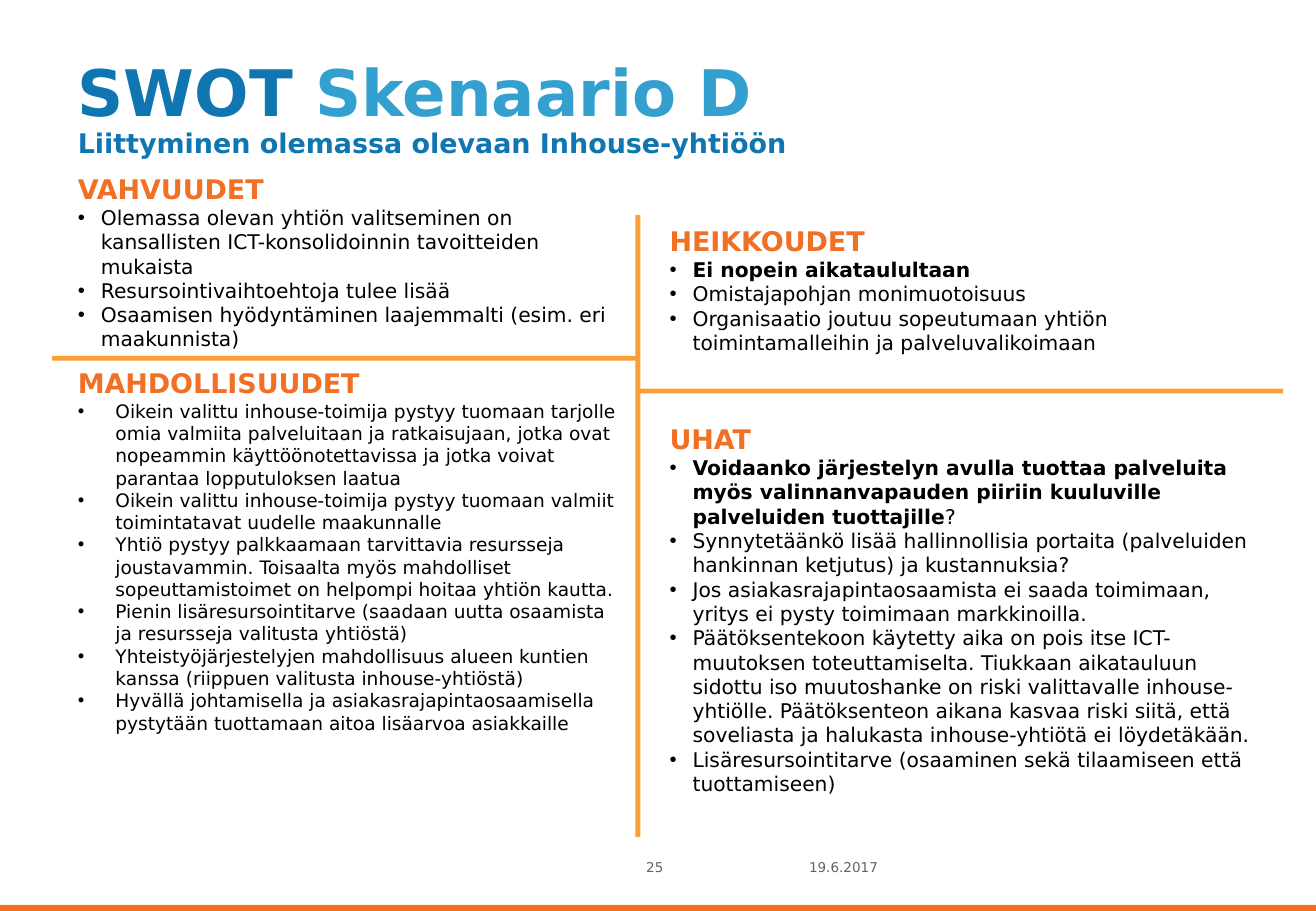
from dataclasses import dataclass

import pptx
import pptx.dml.color
import pptx.enum.shapes
import pptx.enum.text
import pptx.oxml
import pptx.oxml.ns
import pptx.util
from pptx.util import Inches


@dataclass(frozen=True)
class Theme:
    font: str = "DejaVu Sans"
    dark_blue: str = "0F76B1"
    light_blue: str = "34A0CF"
    heading: str = "F27024"
    divider: str = "F99F35"
    body: str = "000000"
    footer: str = "616365"
    title_size: int = 38
    heading_size: int = 16
    body_size: int = 12
    dense_size: int = 11
    footer_size: int = 8


@dataclass(frozen=True)
class Box:
    left: float
    top: float
    width: float
    height: float


@dataclass(frozen=True)
class Point:
    """One bullet; the tail follows the text and is never bold."""
    text: str
    bold: bool = False
    tail: str = ""


@dataclass(frozen=True)
class Quadrant:
    heading: str
    box: Box
    points: tuple[Point, ...]
    size: int
    indent: float = 0.19


@dataclass(frozen=True)
class Bar:
    box: Box
    color: str


@dataclass(frozen=True)
class FooterItem:
    text: str
    left: float


THEME = Theme()
COMPARISON_LAYOUT = 4

STRENGTHS = Quadrant("VAHVUUDET", Box(0.54, 1.4, 4.68, 1.56), (
    Point("Olemassa olevan yhtiön valitseminen on kansallisten ICT-konsolidoinnin tavoitteiden mukaista"),
    Point("Resursointivaihtoehtoja tulee lisää"),
    Point("Osaamisen hyödyntäminen laajemmalti (esim. eri maakunnista)"),
), THEME.body_size)

WEAKNESSES = Quadrant("HEIKKOUDET", Box(5.41, 1.83, 5.15, 1.15), (
    Point("Ei nopein aikataulultaan", bold=True),
    Point("Omistajapohjan monimuotoisuus"),
    Point("Organisaatio joutuu sopeutumaan yhtiön toimintamalleihin ja palveluvalikoimaan"),
), THEME.body_size)

OPPORTUNITIES = Quadrant("MAHDOLLISUUDET", Box(0.54, 3, 4.72, 3.12), (
    Point("Oikein valittu inhouse-toimija pystyy tuomaan tarjolle omia valmiita palveluitaan ja "
          "ratkaisujaan, jotka ovat nopeammin käyttöönotettavissa ja jotka voivat parantaa "
          "lopputuloksen laatua"),
    Point("Oikein valittu inhouse-toimija pystyy tuomaan valmiit toimintatavat uudelle maakunnalle"),
    Point("Yhtiö pystyy palkkaamaan tarvittavia resursseja joustavammin. Toisaalta myös mahdolliset "
          "sopeuttamistoimet on helpompi hoitaa yhtiön kautta."),
    Point("Pienin lisäresursointitarve (saadaan uutta osaamista ja resursseja valitusta yhtiöstä)"),
    Point("Yhteistyöjärjestelyjen mahdollisuus alueen kuntien kanssa (riippuen valitusta inhouse-yhtiöstä)"),
    Point("Hyvällä johtamisella ja asiakasrajapintaosaamisella pystytään tuottamaan aitoa lisäarvoa "
          "asiakkaille"),
), THEME.dense_size, indent=0.31)

THREATS = Quadrant("UHAT", Box(5.41, 3.46, 5.14, 3.17), (
    Point("Voidaanko järjestelyn avulla tuottaa palveluita myös valinnanvapauden piiriin kuuluville "
          "palveluiden tuottajille", bold=True, tail="?"),
    Point("Synnytetäänkö lisää hallinnollisia portaita (palveluiden hankinnan ketjutus) ja kustannuksia?"),
    Point("Jos asiakasrajapintaosaamista ei saada toimimaan, yritys ei pysty toimimaan markkinoilla."),
    Point("Päätöksentekoon käytetty aika on pois itse ICT-muutoksen toteuttamiselta. Tiukkaan "
          "aikatauluun sidottu iso muutoshanke on riski valittavalle inhouse-yhtiölle. Päätöksenteon "
          "aikana kasvaa riski siitä, että soveliasta ja halukasta inhouse-yhtiötä ei löydetäkään."),
    Point("Lisäresursointitarve (osaaminen sekä tilaamiseen että tuottamiseen)"),
), THEME.body_size)

QUADRANTS = (STRENGTHS, WEAKNESSES, OPPORTUNITIES, THREATS)

BARS = (
    Bar(Box(0, 7.45, 10.83, 0.05), THEME.heading),
    Bar(Box(5.23, 1.77, 0.04, 5.12), THEME.divider),
    Bar(Box(0.43, 2.93, 4.83, 0.04), THEME.divider),
    Bar(Box(5.25, 3.2, 5.31, 0.04), THEME.divider),
)

FOOTER = (FooterItem("25", 5.22), FooterItem("19.6.2017", 6.56))


def place(shape, box: Box) -> None:
    shape.left, shape.top = Inches(box.left), Inches(box.top)
    shape.width, shape.height = Inches(box.width), Inches(box.height)


def prepare_frame(frame, anchor=pptx.enum.text.MSO_ANCHOR.TOP) -> None:
    frame.word_wrap = True
    frame.auto_size = pptx.enum.text.MSO_AUTO_SIZE.NONE
    frame.vertical_anchor = anchor


def add_run(paragraph, text: str, size: int, color: str, bold: bool = False) -> None:
    run = paragraph.add_run()
    run.text = text
    run.font.name = THEME.font
    run.font.size = pptx.util.Pt(size)
    run.font.bold = bold
    run.font.color.rgb = pptx.dml.color.RGBColor.from_string(color)


def set_bullet(paragraph, indent: float, bullet: str = "") -> None:
    """Set the hanging indent, with a bullet or explicitly without one."""
    properties = paragraph._p.get_or_add_pPr()
    properties.set("marL", str(Inches(indent)))
    properties.set("indent", str(-Inches(indent)))
    elements = (f'<a:buFont {{ns}} typeface="Arial"/>', f'<a:buChar {{ns}} char="{bullet}"/>') \
        if bullet else ("<a:buNone {ns}/>",)
    for element in elements:
        properties.append(pptx.oxml.parse_xml(element.format(ns=pptx.oxml.ns.nsdecls("a"))))


def draw_title(title) -> None:
    place(title, Box(0.54, 0.3, 9.75, 1.37))
    frame = title.text_frame
    prepare_frame(frame, pptx.enum.text.MSO_ANCHOR.MIDDLE)
    frame.margin_top, frame.margin_bottom = 0, Inches(0.15)
    paragraph = frame.paragraphs[0]
    paragraph.alignment = pptx.enum.text.PP_ALIGN.LEFT
    paragraph.line_spacing = 0.9
    add_run(paragraph, "SWOT ", THEME.title_size, THEME.dark_blue, bold=True)
    add_run(paragraph, "Skenaario D", THEME.title_size, THEME.light_blue, bold=True)
    paragraph.add_line_break()
    add_run(paragraph, "Liittyminen olemassa olevaan Inhouse-yhtiöön",
            THEME.heading_size, THEME.dark_blue, bold=True)


def draw_quadrant(placeholder, quadrant: Quadrant) -> None:
    place(placeholder, quadrant.box)
    frame = placeholder.text_frame
    prepare_frame(frame)
    heading = frame.paragraphs[0]
    set_bullet(heading, 0)
    heading.line_spacing = 0.9
    heading.space_before = pptx.util.Pt(0)
    add_run(heading, quadrant.heading, THEME.heading_size, THEME.heading, bold=True)
    for point in quadrant.points:
        paragraph = frame.add_paragraph()
        set_bullet(paragraph, quadrant.indent, "•")
        paragraph.line_spacing = 1.0
        paragraph.space_before = pptx.util.Pt(0)
        add_run(paragraph, point.text, quadrant.size, THEME.body, point.bold)
        if point.tail:
            add_run(paragraph, point.tail, quadrant.size, THEME.body)


def draw_bar(slide, bar: Bar) -> None:
    shape = slide.shapes.add_shape(pptx.enum.shapes.MSO_SHAPE.RECTANGLE, 0, 0, 0, 0)
    place(shape, bar.box)
    shape.shadow.inherit = False
    shape.fill.solid()
    shape.fill.fore_color.rgb = pptx.dml.color.RGBColor.from_string(bar.color)
    shape.line.fill.background()


def draw_footer_item(slide, item: FooterItem) -> None:
    textbox = slide.shapes.add_textbox(Inches(item.left), Inches(7.02), Inches(0.96), Inches(0.4))
    prepare_frame(textbox.text_frame)
    add_run(textbox.text_frame.paragraphs[0], item.text, THEME.footer_size, THEME.footer)


def main() -> None:
    presentation = pptx.Presentation()
    presentation.slide_width, presentation.slide_height = Inches(10.83), Inches(7.5)
    slide = presentation.slides.add_slide(presentation.slide_layouts[COMPARISON_LAYOUT])
    draw_title(slide.shapes.title)
    for index, quadrant in enumerate(QUADRANTS, start=1):
        draw_quadrant(slide.placeholders[index], quadrant)
    for bar in BARS:
        draw_bar(slide, bar)
    for item in FOOTER:
        draw_footer_item(slide, item)
    presentation.save("out.pptx")


if __name__ == "__main__":
    main()
